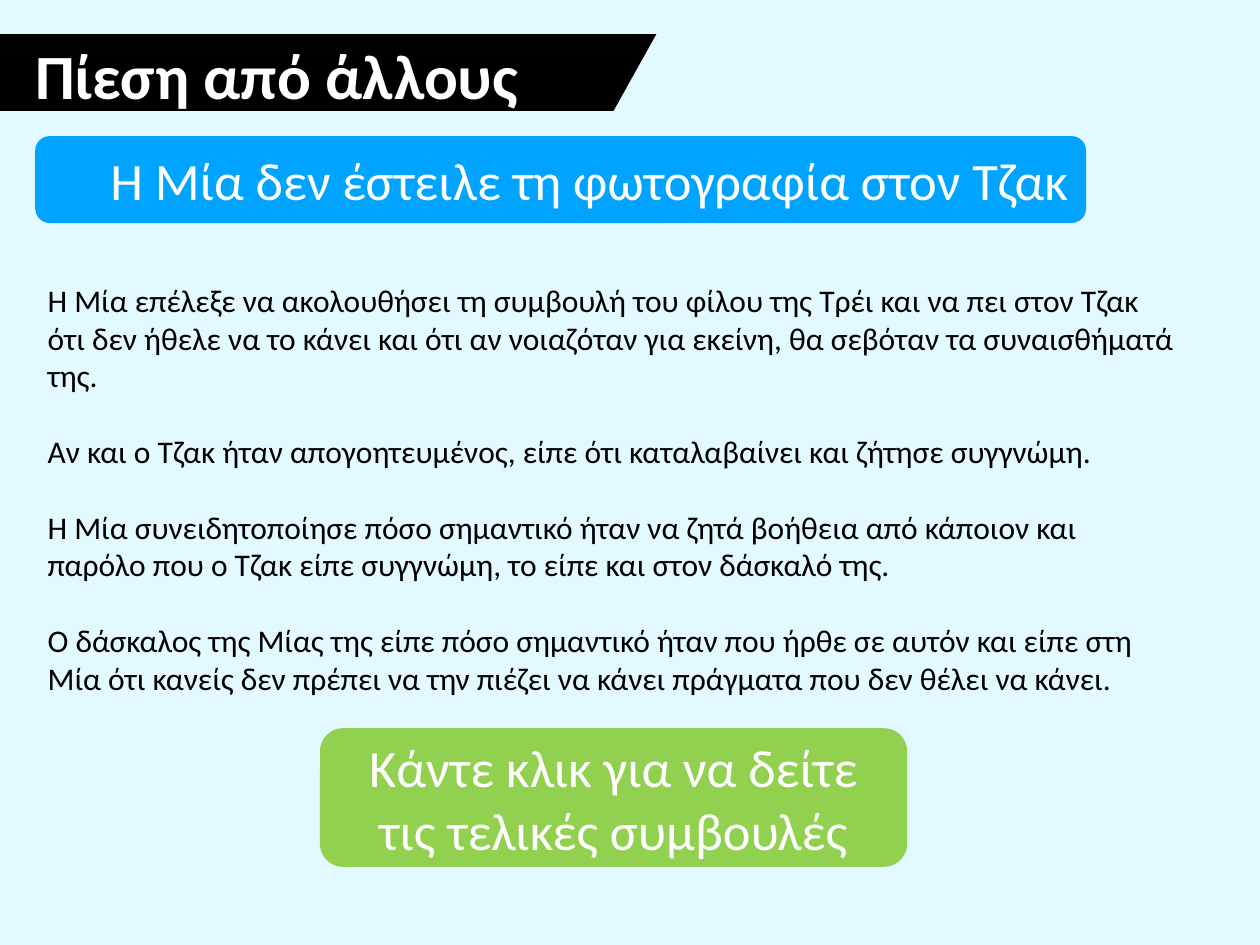
import pptx
import pptx.dml.color
import pptx.enum.shapes
import pptx.enum.text
import pptx.util

Inches = pptx.util.Inches
Shape = pptx.enum.shapes.MSO_SHAPE
Align = pptx.enum.text.PP_ALIGN
Anchor = pptx.enum.text.MSO_ANCHOR

STORY = [
    "Η Μία επέλεξε να ακολουθήσει τη συμβουλή του φίλου της Τρέι και να πει στον Τζακ "
    "ότι δεν ήθελε να το κάνει και ότι αν νοιαζόταν για εκείνη, θα σεβόταν τα "
    "συναισθήματά της.",
    "Αν και ο Τζακ ήταν απογοητευμένος, είπε ότι καταλαβαίνει και ζήτησε συγγνώμη.",
    "Η Μία συνειδητοποίησε πόσο σημαντικό ήταν να ζητά βοήθεια από κάποιον και "
    "παρόλο που ο Τζακ είπε συγγνώμη, το είπε και στον δάσκαλό της.",
    "Ο δάσκαλος της Μίας της είπε πόσο σημαντικό ήταν που ήρθε σε αυτόν και είπε στη "
    "Μία ότι κανείς δεν πρέπει να την πιέζει να κάνει πράγματα που δεν θέλει να κάνει.",
]


def color(value):
    return pptx.dml.color.RGBColor.from_string(value)


def write(frame, texts, size, hue, align=Align.LEFT, bold=False, gap=0, spacing=1.0):
    """Fill a text frame with one paragraph per text, gap points apart."""
    frame.word_wrap = True
    for index, text in enumerate(texts):
        para = frame.paragraphs[0] if index == 0 else frame.add_paragraph()
        para.text = text
        para.alignment = align
        para.line_spacing = spacing
        if index:
            para.space_before = pptx.util.Pt(gap)
        para.font.name = "Calibri"
        para.font.size = pptx.util.Pt(size)
        para.font.bold = bold
        para.font.color.rgb = color(hue)


def add_block(page, kind, left, top, width, height, fill):
    block = page.shapes.add_shape(
        kind, Inches(left), Inches(top), Inches(width), Inches(height))
    block.shadow.inherit = False
    block.fill.solid()
    block.fill.fore_color.rgb = color(fill)
    block.line.fill.background()
    return block


def add_button(page, left, top, width, height, fill, text, align):
    button = add_block(page, Shape.ROUNDED_RECTANGLE, left, top, width, height, fill)
    button.text_frame.vertical_anchor = Anchor.MIDDLE
    write(button.text_frame, [text], 30, "FFFFFF", align)


def add_text(page, left, top, width, height, texts, size, hue, **style):
    box = page.shapes.add_textbox(
        Inches(left), Inches(top), Inches(width), Inches(height))
    write(box.text_frame, texts, size, hue, **style)


def add_title_banner(page, title):
    add_block(page, Shape.FLOWCHART_DATA, 3.51, 0.27, 1.7, 0.61, "000000")
    add_block(page, Shape.RECTANGLE, 0, 0.27, 4.83, 0.61, "000000")
    add_text(page, 0.18, 0.2, 5.91, 0.72, [title], 36, "FFFFFF",
             bold=True, spacing=1.07)


def main():
    deck = pptx.Presentation()
    deck.slide_width, deck.slide_height = Inches(10), Inches(7.5)
    page = deck.slides.add_slide(deck.slide_layouts[6])
    page.background.fill.solid()
    page.background.fill.fore_color.rgb = color("E2F9FF")

    add_text(page, 0.28, 2.18, 9.17, 3.43, STORY, 18, "000000", gap=21.6)
    add_button(page, 0.28, 1.08, 8.34, 0.69, "00A4FF",
               "Η Μία δεν έστειλε τη φωτογραφία στον Τζακ", Align.RIGHT)
    add_title_banner(page, "Πίεση από άλλους")
    add_button(page, 2.54, 5.78, 4.66, 1.1, "92D050",
               "Κάντε κλικ για να δείτε τις τελικές συμβουλές", Align.CENTER)
    deck.save("out.pptx")


if __name__ == "__main__":
    main()
